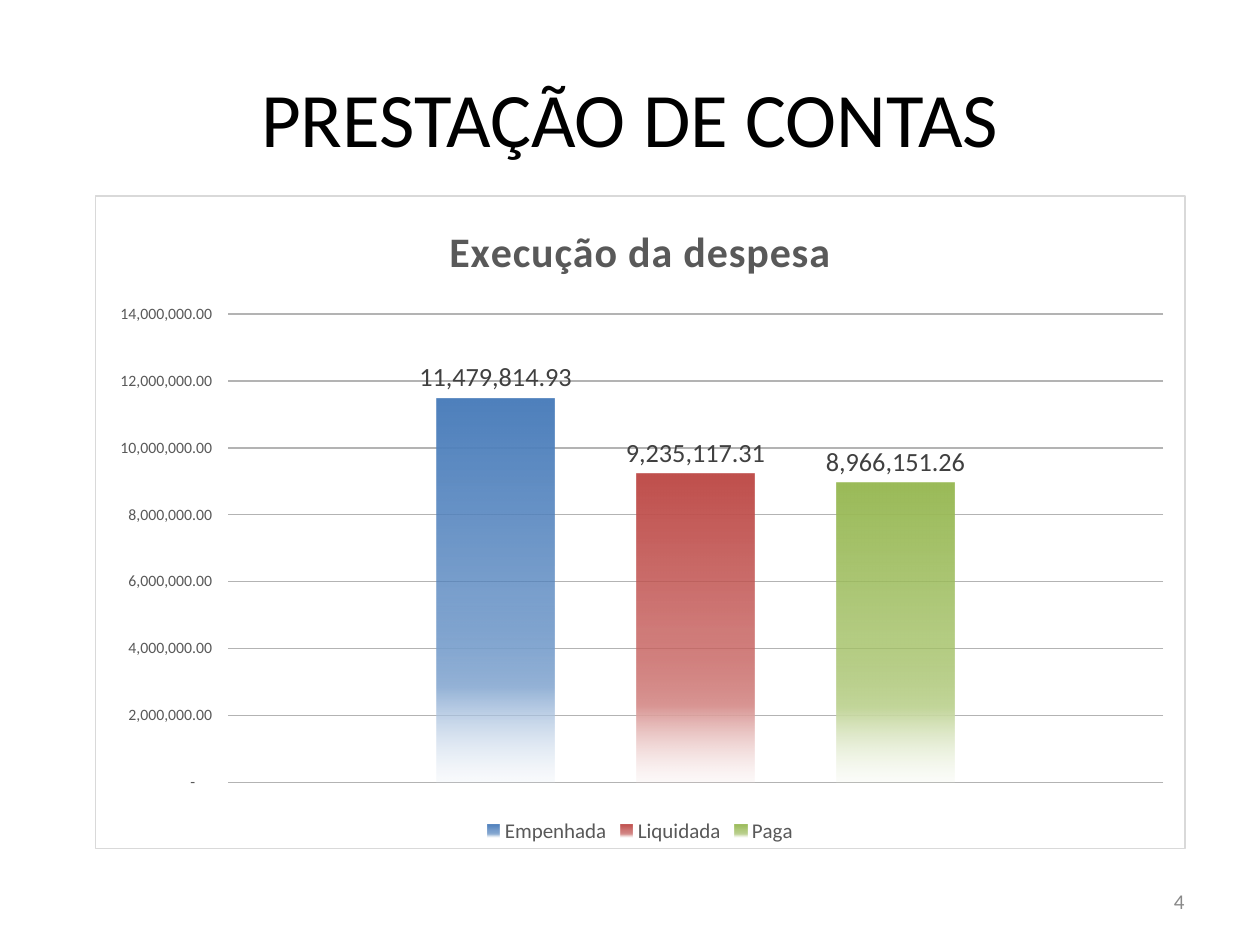
from pptx import Presentation
from pptx.chart.data import CategoryChartData
from pptx.dml.color import RGBColor
from pptx.enum.chart import XL_CHART_TYPE, XL_LABEL_POSITION, XL_LEGEND_POSITION, XL_TICK_MARK
from pptx.enum.text import MSO_ANCHOR, PP_ALIGN
from pptx.oxml import parse_xml
from pptx.oxml.ns import nsdecls
from pptx.util import Inches, Pt

COLUMN = XL_CHART_TYPE.COLUMN_CLUSTERED
OUTSIDE_END = XL_LABEL_POSITION.OUTSIDE_END
BOTTOM = XL_LEGEND_POSITION.BOTTOM
TICK_OUT = XL_TICK_MARK.OUTSIDE
MIDDLE = MSO_ANCHOR.MIDDLE
CENTER, RIGHT = PP_ALIGN.CENTER, PP_ALIGN.RIGHT

NUMBER_FORMAT = '_(* #,##0.00_);_(* \\(#,##0.00\\);_(* "-"??_);_(@_)'
EXPENSES = [
    ("Empenhada", 11479814.93, ("4F81BD", "95B3D7", "DCE6F2")),
    ("Liquidada", 9235117.31, ("C0504D", "D99694", "F2DCDB")),
    ("Paga", 8966151.26, ("9BBB59", "C3D69B", "EBF1DE")),
]


def rgb(value):
    return RGBColor.from_string(value)


def gradient(base, light, pale):
    stops = [(0, base, 100), (51, base, 75), (75, light, 100), (100, pale, 15)]
    stops_xml = "".join(
        f'<a:gs pos="{pos * 1000}"><a:srgbClr val="{color}">'
        f'<a:alpha val="{alpha * 1000}"/></a:srgbClr></a:gs>'
        for pos, color, alpha in stops
    )
    return parse_xml(
        f'<a:gradFill {nsdecls("a")} rotWithShape="1"><a:gsLst>{stops_xml}</a:gsLst>'
        '<a:lin ang="5400000" scaled="0"/></a:gradFill>'
    )


class SlideBuilder:
    font_name = "Calibri"
    gray = "595959"

    def __init__(self, prs):
        self.s = prs.slides.add_slide(prs.slide_layouts[6])

    def style(self, font, size, color, bold=False):
        font.name = self.font_name
        font.size = Pt(size)
        font.bold = bold
        font.color.rgb = rgb(color)

    def text(self, box, text, size, color, align, fill=None):
        sp = self.s.shapes.add_textbox(*map(Inches, box))
        if fill:
            sp.fill.solid()
            sp.fill.fore_color.rgb = rgb(fill)
        tf = sp.text_frame
        tf.word_wrap = True
        tf.vertical_anchor = MIDDLE
        tf.text = text
        p = tf.paragraphs[0]
        p.alignment = align
        self.style(p.runs[0].font, size, color)

    def column_chart(self, box, title, rows):
        data = CategoryChartData(number_format=NUMBER_FORMAT)
        data.categories = ["1"]
        for name, value, _ in rows:
            data.add_series(name, [value])
        chart = self.s.shapes.add_chart(COLUMN, *map(Inches, box), data).chart
        self.style(chart.font, 10, "000000")
        self.chart_frame(chart, "FFFFFF", "D9D9D9")
        self.chart_title(chart, title)
        self.axes(chart)
        chart.has_legend = True
        chart.legend.position = BOTTOM
        chart.legend.include_in_layout = False
        self.style(chart.legend.font, 12, self.gray)
        plot = chart.plots[0]
        plot.gap_width = 355
        plot.overlap = -70
        plot.vary_by_categories = False
        for series, (_, _, colors) in zip(plot.series, rows):
            self.series(series, colors)

    def chart_frame(self, chart, fill, border):
        frame = parse_xml(
            f'<c:spPr {nsdecls("c", "a")}>'
            f'<a:solidFill><a:srgbClr val="{fill}"/></a:solidFill>'
            f'<a:ln w="{Pt(0.75)}"><a:solidFill><a:srgbClr val="{border}"/>'
            '</a:solidFill></a:ln></c:spPr>'
        )
        chart.element.find("c:chart", chart.element.nsmap).addnext(frame)

    def chart_title(self, chart, title):
        chart.has_title = True
        tf = chart.chart_title.text_frame
        tf.text = title
        r = tf.paragraphs[0].runs[0]
        self.style(r.font, 24, self.gray, bold=True)
        r.font._element.set("spc", "50") if hasattr(r.font, "_element") else r._r.rPr.set("spc", "50")
        chart.chart_title.include_in_layout = False

    def axes(self, chart):
        chart.category_axis.visible = False
        axis = chart.value_axis
        axis.minimum_scale = 0
        axis.maximum_scale = 14000000
        axis.major_unit = 2000000
        axis.major_tick_mark = TICK_OUT
        axis.format.line.fill.background()
        axis.has_major_gridlines = True
        line = axis.major_gridlines.format.line
        line.color.rgb = rgb("B3B3B3")
        line.width = Pt(0.75)
        axis.tick_labels.number_format = NUMBER_FORMAT
        axis.tick_labels.number_format_is_linked = False
        self.style(axis.tick_labels.font, 9, self.gray)

    def series(self, series, colors):
        series.invert_if_negative = False
        series._element.get_or_add_spPr().append(gradient(*colors))
        labels = series.data_labels
        labels.show_value = True
        labels.position = OUTSIDE_END
        labels.number_format = NUMBER_FORMAT
        labels.number_format_is_linked = False
        self.style(labels.font, 15, "404040")


def main():
    prs = Presentation()
    prs.slide_width, prs.slide_height = Inches(10), Inches(7.5)
    slide = SlideBuilder(prs)
    slide.text((7.17, 6.95, 2.33, 0.4), "4", 12, "898989", RIGHT)
    slide.text((0.5, 0.3, 9, 1.25), "PRESTAÇÃO DE CONTAS", 44, "000000", CENTER, "FFFFFF")
    slide.column_chart((0.75, 1.55, 8.66, 5.19), "Execução da despesa", EXPENSES)
    prs.save("out.pptx")


if __name__ == "__main__":
    main()
